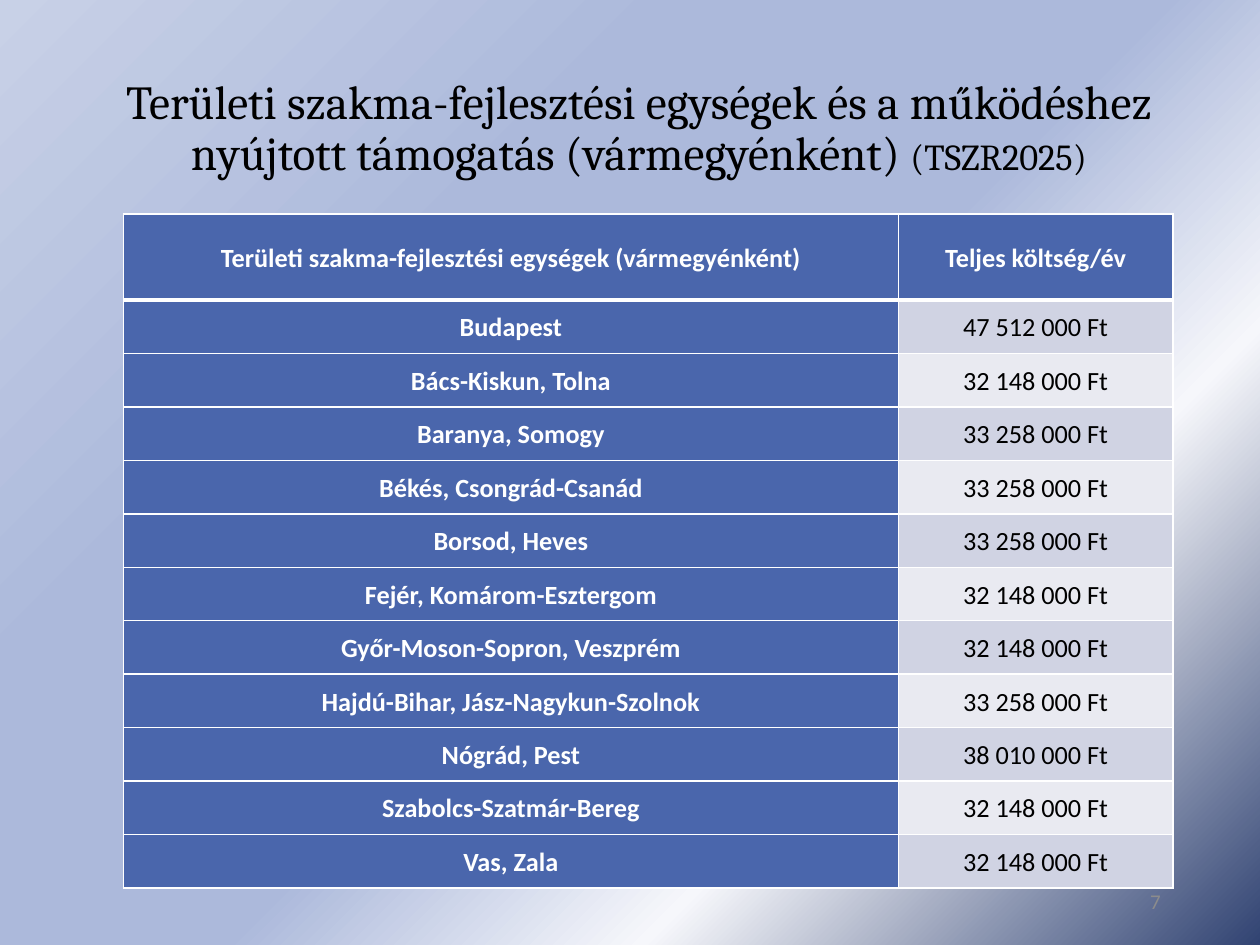
from lxml import etree
from pptx import Presentation, util as u
from pptx.dml.color import RGBColor
from pptx.enum import text as t
from pptx.oxml import parse_xml
from pptx.oxml.ns import qn

WIDE, HIGH = 10, 7.5
BLUE, WHITE, BLACK, GREY = "4A66AC", "FFFFFF", "000000", "8C8C8C"
BANDS = ["D0D3E3", "E9EAF1"]
STOPS = [(0, "314372", 87), (28, "F6F7FB", 100), (47, "ACB9DB", 100),
         (69, "ACB9DB", 100), (100, "C8D1E7", 100)]

TITLE = [("Területi szakma-fejlesztési egységek és a működéshez "
          "nyújtott támogatás (vármegyénként) ", 27), ("(TSZR2025)", 20.9)]
HEAD = ("Területi szakma-fejlesztési egységek (vármegyénként)", "Teljes költség/év")
COSTS = [
    ("Budapest", "47 512 000 Ft"),
    ("Bács-Kiskun, Tolna", "32 148 000 Ft"),
    ("Baranya, Somogy", "33 258 000 Ft"),
    ("Békés, Csongrád-Csanád", "33 258 000 Ft"),
    ("Borsod, Heves", "33 258 000 Ft"),
    ("Fejér, Komárom-Esztergom", "32 148 000 Ft"),
    ("Győr-Moson-Sopron, Veszprém", "32 148 000 Ft"),
    ("Hajdú-Bihar, Jász-Nagykun-Szolnok", "33 258 000 Ft"),
    ("Nógrád, Pest", "38 010 000 Ft"),
    ("Szabolcs-Szatmár-Bereg", "32 148 000 Ft"),
    ("Vas, Zala", "32 148 000 Ft"),
]
LEFT, TOP, TALL = 0.98, 1.7, 5.35
COLS = [6.15, 2.18]
HEAD_H = 0.68
ROW_H = (TALL - HEAD_H) / len(COSTS)


def color(code):
    return RGBColor.from_string(code)


def write(frame, runs, size=15, font="Calibri", ink=BLACK, bold=False,
          align=t.PP_ALIGN.CENTER, space=None):
    """Fill the first paragraph; runs is a string or (text, size) pairs."""
    para = frame.paragraphs[0]
    para.alignment = align
    if space:
        para.line_spacing = space
    for words, pts in [(runs, size)] if isinstance(runs, str) else runs:
        run = para.add_run()
        run.text = words
        run.font.size, run.font.name, run.font.bold = u.Pt(pts), font, bold
        run.font.color.rgb = color(ink)


def paint_back(slide):
    """Give the slide a gradient that spreads from the lower right corner."""
    slide.background.fill.solid()
    props = slide.background._cSld.find(".//" + qn("p:bgPr"))
    stops = "".join(
        f'<a:gs pos="{pos * 1000}"><a:srgbClr val="{code}">'
        f'<a:alpha val="{alpha * 1000}"/></a:srgbClr></a:gs>'
        for pos, code, alpha in STOPS)
    grad = parse_xml(
        '<a:gradFill xmlns:a="http://schemas.openxmlformats.org/drawingml/2006/main"'
        f' rotWithShape="1"><a:gsLst>{stops}</a:gsLst><a:path path="circle">'
        '<a:fillToRect l="100000" t="100000"/></a:path></a:gradFill>')
    props.replace(props.find(qn("a:solidFill")), grad)


def edge(cell, widths):
    """Draw white borders; widths are points for left, right, top, bottom."""
    props = cell._tc.get_or_add_tcPr()
    for spot, (side, pts) in enumerate(zip("LRTB", widths)):
        line = etree.Element(qn("a:ln" + side), w=str(u.Pt(pts)))
        fill = etree.SubElement(line, qn("a:solidFill"))
        etree.SubElement(fill, qn("a:srgbClr"), val=WHITE)
        props.insert(spot, line)


def add_costs(slide):
    rows = [HEAD] + COSTS
    table = slide.shapes.add_table(
        len(rows), len(COLS), u.Inches(LEFT), u.Inches(TOP),
        u.Inches(sum(COLS)), u.Inches(TALL)).table
    table.first_col = True
    for col, width in zip(table.columns, COLS):
        col.width = u.Inches(width)
    for r, row in enumerate(rows):
        table.rows[r].height = u.Inches(ROW_H if r else HEAD_H)
        for c, words in enumerate(row):
            cell = table.cell(r, c)
            label = r == 0 or c == 0
            cell.margin_left = cell.margin_right = u.Inches(0.01)
            cell.margin_top = cell.margin_bottom = u.Inches(0.01)
            cell.vertical_anchor = t.MSO_ANCHOR.MIDDLE
            cell.fill.solid()
            cell.fill.fore_color.rgb = color(BLUE if label else BANDS[(r - 1) % 2])
            edge(cell, (1, 1, 3 if r == 1 else 1, 1 if r else 3))
            write(cell.text_frame, words, ink=WHITE if label else BLACK,
                  bold=label, space=1.07)


def main():
    deck = Presentation()
    deck.slide_width, deck.slide_height = u.Inches(WIDE), u.Inches(HIGH)
    slide = deck.slides.add_slide(deck.slide_layouts[5])
    paint_back(slide)

    title = slide.shapes.title
    title.left, title.top = u.Inches(0.76), u.Inches(0.44)
    title.width, title.height = u.Inches(8.62), u.Inches(0.9)
    frame = title.text_frame
    frame.auto_size = t.MSO_AUTO_SIZE.NONE
    frame.vertical_anchor = t.MSO_ANCHOR.TOP
    frame.margin_top = u.Inches(0.18)
    write(frame, TITLE, font="Cambria", space=0.9)

    add_costs(slide)

    number = slide.shapes.add_textbox(
        u.Inches(7.06), u.Inches(6.95), u.Inches(2.25), u.Inches(0.4)).text_frame
    number.word_wrap = True
    number.vertical_anchor = t.MSO_ANCHOR.MIDDLE
    write(number, "7", size=12, ink=GREY, align=t.PP_ALIGN.RIGHT)
    deck.save("out.pptx")


if __name__ == "__main__":
    main()
